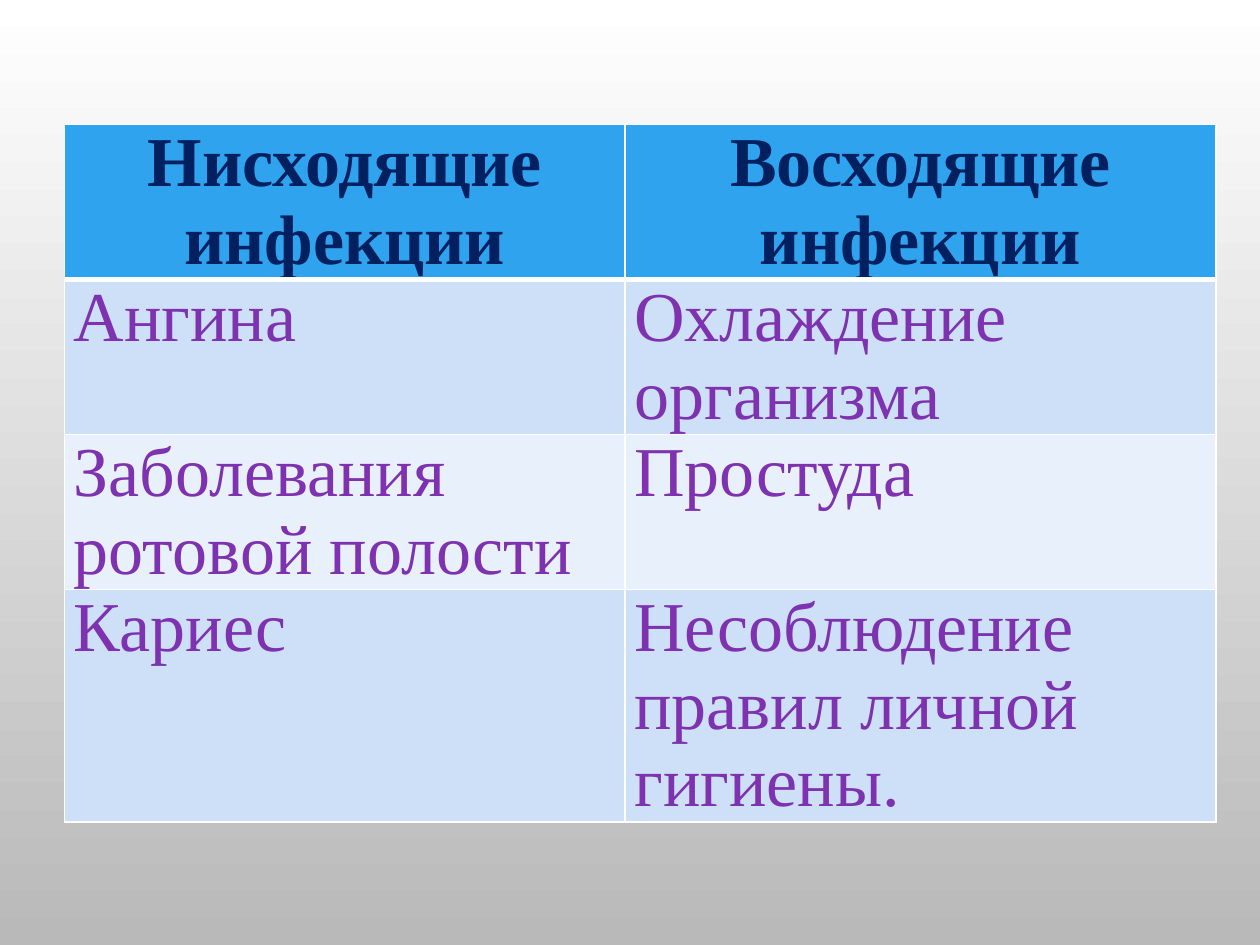
from lxml.etree import SubElement
from pptx import Presentation
from pptx.dml.color import RGBColor as Rgb
from pptx.enum.text import PP_ALIGN as Align
from pptx.oxml.ns import qn
from pptx.util import Cm, Pt

COLORS = {
    "sky_top": "FFFFFF",
    "sky_bottom": "B9B9B9",
    "header": "2FA3EE",
    "header_text": "002060",
    "odd_row": "CDE0F8",
    "even_row": "E8F0FC",
    "body_text": "7E32B0",
    "border": "FFFFFF",
}
FONT = "Times New Roman"
COLUMN_WIDTHS = (11.3, 11.91)
ROW_HEIGHTS = (2.97, 2.97, 2.97, 4.47)
INFECTIONS = (
    ("Нисходящие инфекции", "Восходящие инфекции"),
    ("Ангина", "Охлаждение организма"),
    ("Заболевания ротовой полости", "Простуда"),
    ("Кариес", "Несоблюдение правил личной гигиены."),
)


def color(name):
    return Rgb.from_string(COLORS[name])


def paint_background(slide):
    fill = slide.background.fill
    fill.gradient()
    fill.gradient_angle = 270
    for stop, name in zip(fill.gradient_stops, ("sky_top", "sky_bottom")):
        stop.color.rgb = color(name)


def draw_borders(cell, bottom_width):
    properties = cell._tc.get_or_add_tcPr()
    widths = {"a:lnL": 1, "a:lnR": 1, "a:lnT": 1, "a:lnB": bottom_width}
    for side, width in widths.items():
        line = SubElement(properties, qn(side), w=str(Pt(width)))
        solid = SubElement(line, qn("a:solidFill"))
        SubElement(solid, qn("a:srgbClr"), val=COLORS["border"])


def fill_cell(cell, words, row):
    is_header = row == 0
    draw_borders(cell, 3 if is_header else 1)
    cell.fill.solid()
    band = "odd_row" if row % 2 else "even_row"
    cell.fill.fore_color.rgb = color("header" if is_header else band)
    cell.margin_left = cell.margin_right = Cm(0.19)
    cell.margin_top = cell.margin_bottom = 0

    paragraph = cell.text_frame.paragraphs[0]
    paragraph.alignment = Align.CENTER if is_header else Align.LEFT
    run = paragraph.add_run()
    run.text = words
    run.font.name = FONT
    run.font.size = Pt(40)
    run.font.bold = is_header
    run.font.color.rgb = color("header_text" if is_header else "body_text")


def add_infection_table(slide):
    table = slide.shapes.add_table(
        len(ROW_HEIGHTS), len(COLUMN_WIDTHS), Cm(1.3), Cm(2.51),
        Cm(sum(COLUMN_WIDTHS)), Cm(sum(ROW_HEIGHTS)),
    ).table
    for column, width in zip(table.columns, COLUMN_WIDTHS):
        column.width = Cm(width)
    for row, height in zip(table.rows, ROW_HEIGHTS):
        row.height = Cm(height)
    for row, entries in enumerate(INFECTIONS):
        for column, words in enumerate(entries):
            fill_cell(table.cell(row, column), words, row)


def main():
    deck = Presentation()
    deck.slide_width, deck.slide_height = Cm(25.4), Cm(19.05)
    slide = deck.slides.add_slide(deck.slide_layouts[6])
    paint_background(slide)
    add_infection_table(slide)
    deck.save("out.pptx")


if __name__ == "__main__":
    main()
